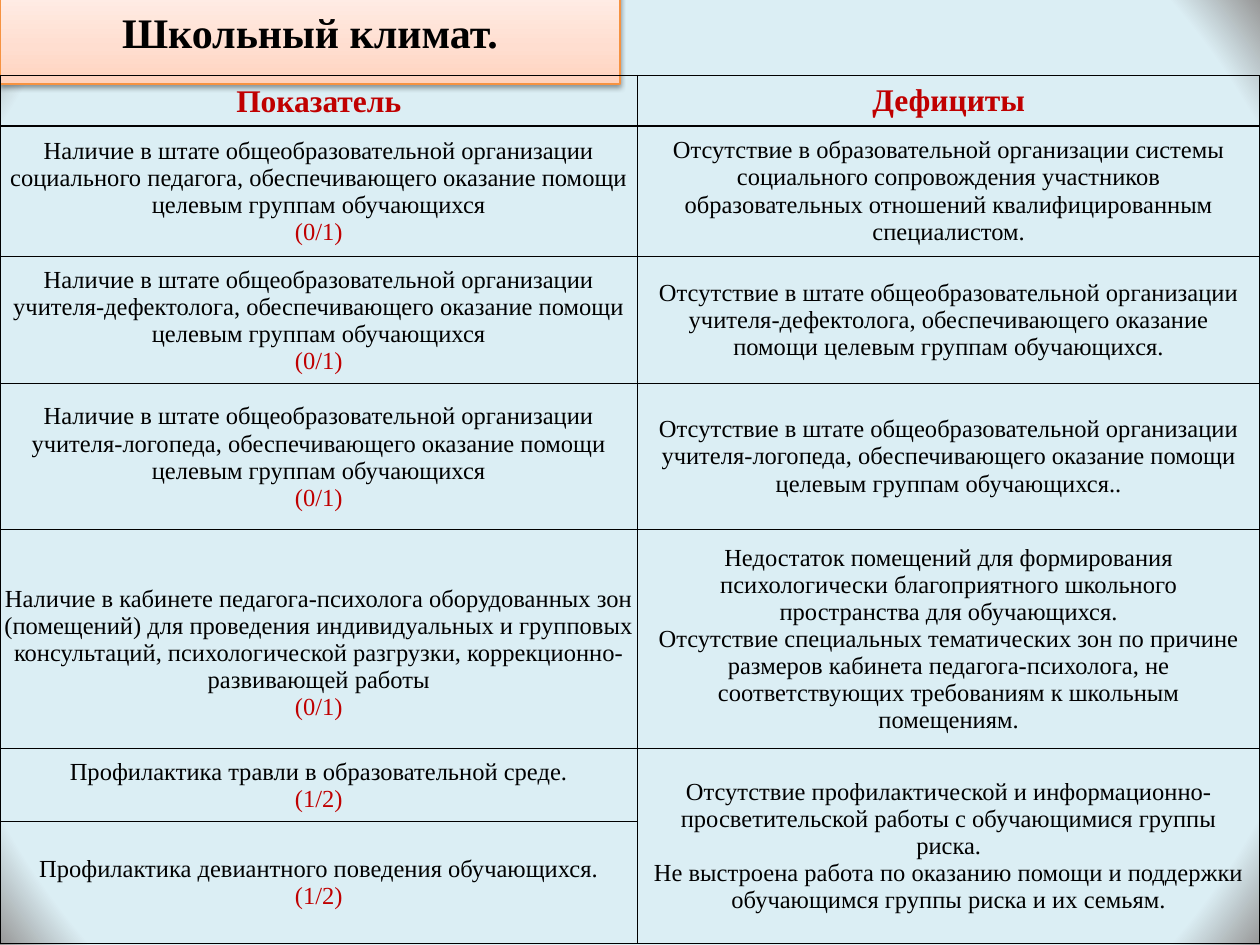
from lxml import etree
from pptx import Presentation
from pptx.dml.color import RGBColor
from pptx.enum import text
from pptx.oxml import parse_xml
from pptx.oxml.ns import nsdecls
from pptx.util import Inches, Pt

TITLE = "Школьный климат."
HEADERS = ("Показатель", "Дефициты")
# indicator, score, deficits (None: the deficits cell above continues)
ROWS = [
    ("Наличие в штате общеобразовательной организации социального педагога, "
     "обеспечивающего оказание помощи целевым группам обучающихся", "(0/1)",
     ["Отсутствие в образовательной организации системы социального сопровождения "
      "участников образовательных отношений квалифицированным специалистом."]),
    ("Наличие в штате общеобразовательной организации учителя-дефектолога, "
     "обеспечивающего оказание помощи целевым группам обучающихся", "(0/1)",
     ["Отсутствие в штате общеобразовательной организации учителя-дефектолога, "
      "обеспечивающего оказание помощи целевым группам обучающихся."]),
    ("Наличие в штате общеобразовательной организации учителя-логопеда, "
     "обеспечивающего оказание помощи целевым группам обучающихся", "(0/1)",
     ["Отсутствие в штате общеобразовательной организации учителя-логопеда, "
      "обеспечивающего оказание помощи целевым группам обучающихся.."]),
    ("Наличие в кабинете педагога-психолога оборудованных зон (помещений) для проведения "
     "индивидуальных и групповых консультаций, психологической разгрузки, "
     "коррекционно-развивающей работы", "(0/1)",
     ["Недостаток помещений для формирования психологически благоприятного школьного "
      "пространства для обучающихся.",
      "Отсутствие специальных тематических зон по причине размеров кабинета "
      "педагога-психолога, не соответствующих требованиям к школьным помещениям."]),
    ("Профилактика травли в образовательной среде.", "(1/2)",
     ["Отсутствие профилактической и информационно-просветительской работы с обучающимися "
      "группы риска.",
      "Не выстроена работа по оказанию помощи и поддержки обучающимся группы риска "
      "и их семьям."]),
    ("Профилактика девиантного поведения обучающихся.", "(1/2)", None),
]
COL_WIDTHS = (5.06, 4.94)
ROW_HEIGHTS = (0.38, 0.99, 1.01, 1.16, 1.66, 0.58, 0.97)
LOWERED_ROW = 4  # its indicator sits one line below the middle

THEME = dict(
    font="Times New Roman", title=24, header=18, body=14,
    ink="000000", accent="C00000", title_line="F69240",
    title_stops=[(0, "FFD2BD", 100), (35, "FFDED0", 100), (100, "FFF2ED", 100)],
    bg_stops=[(91, "DBEEF4", 44), (100, "979797", 100)],
)


def gradient(stops, shade):
    """Return a gradFill from (position, colour, opacity) stops, all in percent."""
    gs = "".join(
        f'<a:gs pos="{pos * 1000}"><a:srgbClr val="{color}">'
        f'<a:alpha val="{alpha * 1000}"/></a:srgbClr></a:gs>'
        for pos, color, alpha in stops)
    return parse_xml(f'<a:gradFill {nsdecls("a")} rotWithShape="1">'
                     f'<a:gsLst>{gs}</a:gsLst>{shade}</a:gradFill>')


def swap_fill(parent, new_fill):
    """Replace the solid fill directly under parent."""
    old = parent.find("{*}solidFill")
    parent.replace(old, new_fill)


def write(tf, lines, size, bold=False, color=THEME["ink"], last_color=None):
    """Write centred paragraphs; last_color marks the closing one."""
    for i, line in enumerate(lines):
        p = tf.paragraphs[0] if i == 0 else tf.add_paragraph()
        p.alignment = text.PP_ALIGN.CENTER
        r = p.add_run()
        r.text = line
        r.font.name, r.font.size, r.font.bold = THEME["font"], Pt(size), bold
        is_last = i == len(lines) - 1
        r.font.color.rgb = RGBColor.from_string(last_color if last_color and is_last else color)


def format_cell(cell, col):
    cell.vertical_anchor = text.MSO_ANCHOR.MIDDLE
    if col == 0:
        cell.margin_left = cell.margin_right = cell.margin_top = Inches(0.01)
        cell.margin_bottom = 0
    cell.fill.background()
    tc_pr = cell._tc.get_or_add_tcPr()
    for i, side in enumerate(("lnL", "lnR", "lnT", "lnB")):
        tc_pr.insert(i, parse_xml(
            f'<a:{side} {nsdecls("a")} w="{Pt(1)}"><a:solidFill>'
            f'<a:srgbClr val="{THEME["ink"]}"/></a:solidFill></a:{side}>'))


def add_title(s):
    sp = s.shapes.title
    sp.left, sp.top, sp.width, sp.height = (Inches(v) for v in (0, 0, 4.92, 0.5))
    sp.fill.solid()
    sp.line.color.rgb = RGBColor.from_string(THEME["title_line"])
    sp.line.width = Pt(0.75)
    sp_pr = sp.element.spPr
    swap_fill(sp_pr, gradient(THEME["title_stops"], '<a:lin ang="16200000" scaled="1"/>'))
    effects = etree.SubElement(sp_pr, "{%s}effectLst" % sp_pr.nsmap["a"])
    effects.append(parse_xml(
        f'<a:outerShdw {nsdecls("a")} blurRad="{Pt(3.1)}" dist="{Pt(1.6)}" dir="5400000" '
        f'rotWithShape="0"><a:srgbClr val="{THEME["ink"]}"><a:alpha val="38000"/>'
        f'</a:srgbClr></a:outerShdw>'))
    tf = sp.text_frame
    tf.word_wrap = True
    tf.auto_size = text.MSO_AUTO_SIZE.SHAPE_TO_FIT_TEXT
    write(tf, [TITLE], THEME["title"], bold=True)


def add_indicator_table(s):
    table = s.shapes.add_table(
        len(ROWS) + 1, len(HEADERS), 0, Inches(0.6),
        Inches(sum(COL_WIDTHS)), Inches(sum(ROW_HEIGHTS))).table
    table.first_row = table.horz_banding = False
    for column, width in zip(table.columns, COL_WIDTHS):
        column.width = Inches(width)
    for row, height in zip(table.rows, ROW_HEIGHTS):
        row.height = Inches(height)
        for col, cell in enumerate(row.cells):
            format_cell(cell, col)

    for col, header in enumerate(HEADERS):
        write(table.cell(0, col).text_frame, [header], THEME["header"],
              bold=True, color=THEME["accent"])
    for i, (indicator, score, deficits) in enumerate(ROWS, start=1):
        write(table.cell(i, 0).text_frame, [indicator, score], THEME["body"],
              last_color=THEME["accent"])
        if deficits:
            write(table.cell(i, 1).text_frame, deficits, THEME["body"])
        else:
            table.cell(i - 1, 1).merge(table.cell(i, 1))
    table.cell(LOWERED_ROW, 0).margin_top = Inches(0.23)


def main():
    prs = Presentation()
    prs.slide_width, prs.slide_height = Inches(10), Inches(7.5)
    s = prs.slides.add_slide(prs.slide_layouts[5])
    s.background.fill.solid()
    swap_fill(s.element.xpath(".//p:bgPr")[0], gradient(
        THEME["bg_stops"],
        '<a:path path="circle"><a:fillToRect l="50000" t="50000" r="50000" b="50000"/></a:path>'))
    add_title(s)
    add_indicator_table(s)
    prs.save("out.pptx")


if __name__ == "__main__":
    main()
